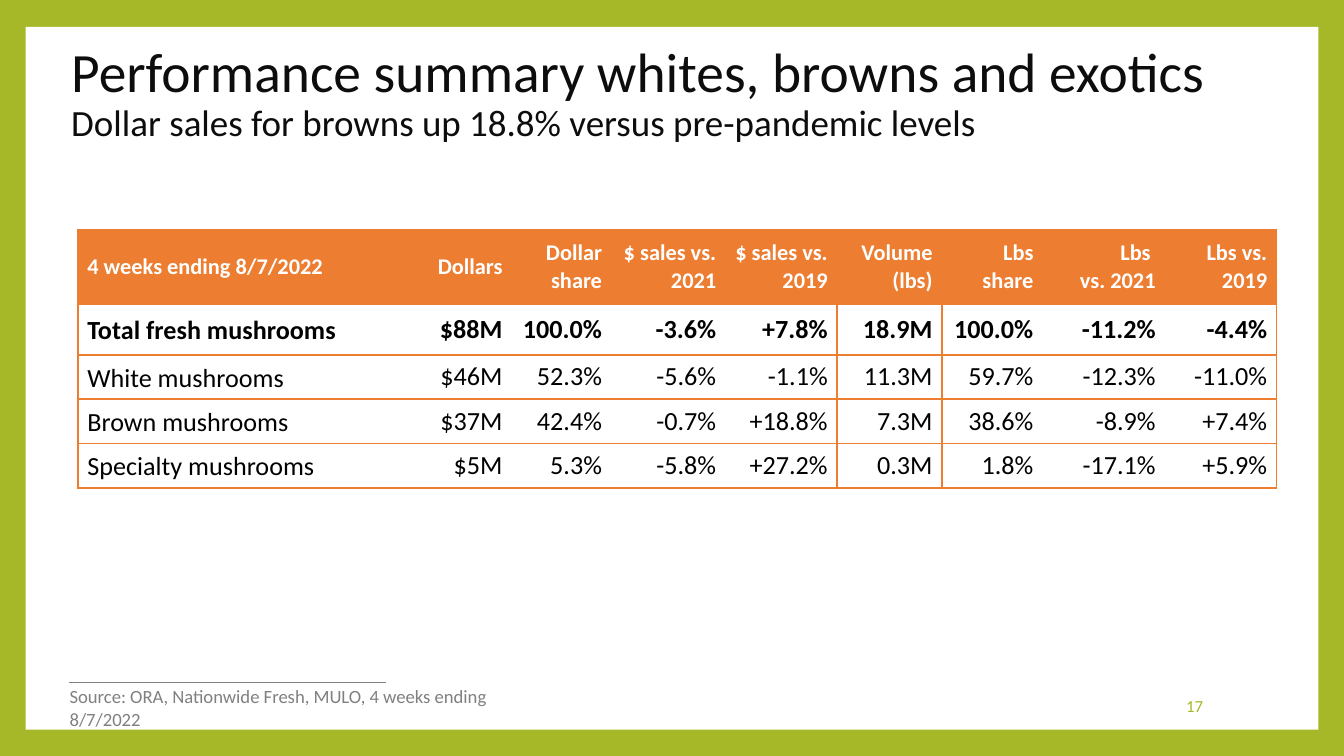
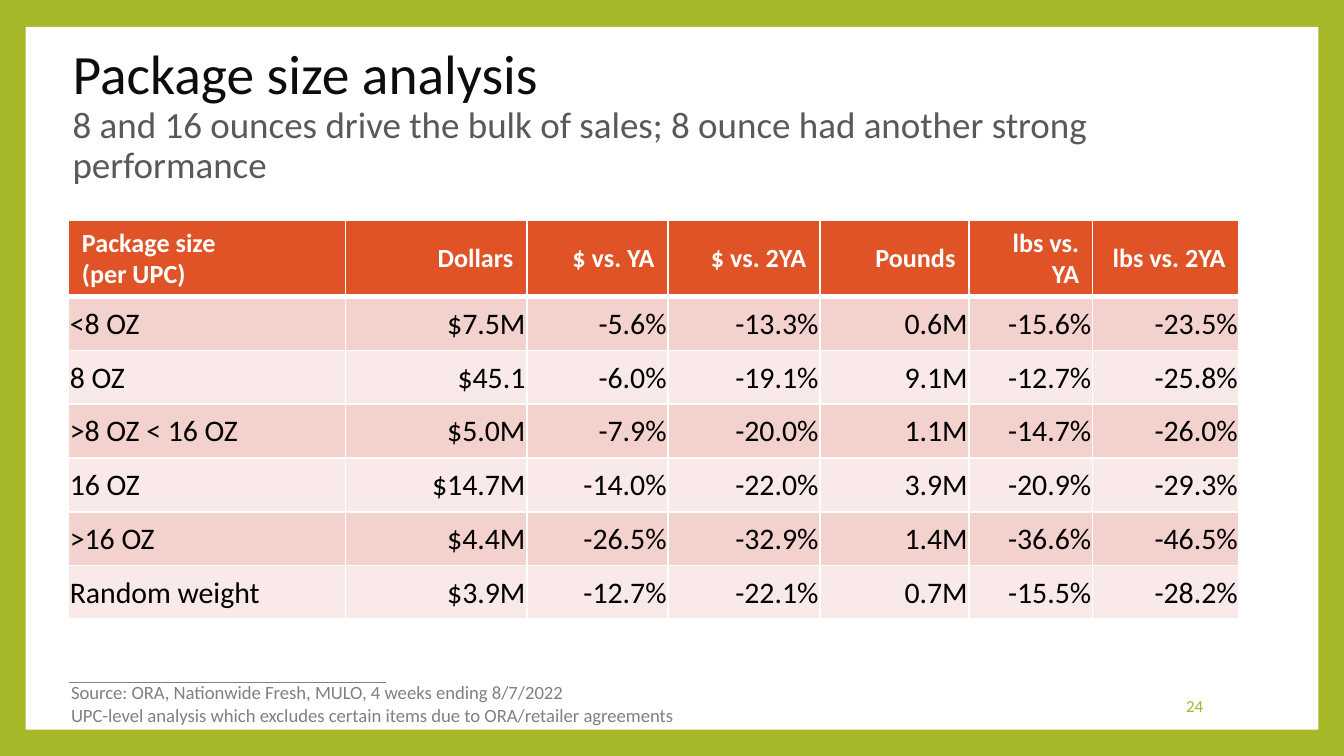
from copy import deepcopy

from lxml import etree
from pptx import Presentation
from pptx import util as u
from pptx.dml.color import RGBColor
from pptx.enum import shapes, text
from pptx.oxml.ns import qn

# Slide size and a square grid, 100 columns wide
W = u.Inches(10)
H = W * 9 // 16
UNIT = W // 100

FONT = "Calibri"
LIME = RGBColor(0xA6, 0xB7, 0x27)
WHITE = RGBColor(0xFF, 0xFF, 0xFF)
BLACK = RGBColor(0, 0, 0)
INK = RGBColor(0x0D, 0x0D, 0x0D)
SLATE = RGBColor(0x59, 0x59, 0x59)
GRAY = RGBColor(0x80, 0x80, 0x80)
ORANGE = RGBColor(0xED, 0x7D, 0x31)
RUST = RGBColor(0xDF, 0x53, 0x27)
ROSE = RGBColor(0xF3, 0xD1, 0xCD)
BLUSH = RGBColor(0xF9, 0xE9, 0xE8)

LEFT, RIGHT = text.PP_ALIGN.LEFT, text.PP_ALIGN.RIGHT
MIDDLE = text.MSO_ANCHOR.MIDDLE
PLAIN = "{2D5ABB26-0587-4C30-8999-92F81FD0307C}"  # table style without grid

SOURCE = "Source: ORA, Nationwide Fresh, MULO, 4 weeks ending 8/7/2022"


def grid(*cells):
    """Turn grid units into lengths."""
    return [round(c * UNIT) for c in cells]


def write(frame, words, size, color, bold=False, align=LEFT, lead=None):
    """Append text to a frame: \\n starts a paragraph, \\v breaks a line."""
    for n, line in enumerate(words.split("\n")):
        par = frame.add_paragraph() if n else frame.paragraphs[-1]
        par.alignment = align
        if lead:
            par.line_spacing = lead
        for k, part in enumerate(line.split("\v")):
            if k:
                par.add_line_break()
                par._p[-1].append(deepcopy(par.runs[-1]._r.rPr))
            if part:
                run = par.add_run()
                run.text = part
                font = run.font
                font.name, font.size, font.bold = FONT, u.Pt(size), bold
                font.color.rgb = color


def panel(slide):
    """White panel inside the lime border, with the rule above the source."""
    rect = slide.shapes.add_shape(shapes.MSO_SHAPE.RECTANGLE,
                                  *grid(1.9, 2, 96.2, 52.3))
    rect.shadow.inherit = False
    rect.fill.solid()
    rect.fill.fore_color.rgb = WHITE
    rect.line.fill.background()

    rule = slide.shapes.add_connector(shapes.MSO_CONNECTOR.STRAIGHT,
                                      *grid(5.1, 50.8, 28.7, 50.8))
    rule.line.color.rgb = GRAY
    rule.line.width = u.Pt(0.79)
    etree.SubElement(rule._element.spPr, qn("a:effectLst"))


def heading(slide, box, head, sub, tone):
    title = slide.shapes.title
    title.left, title.top, title.width, title.height = grid(*box)
    tree = title._element.getparent()
    tree.append(title._element)  # bring in front of the panel
    frame = title.text_frame
    frame.auto_size = text.MSO_AUTO_SIZE.NONE
    frame.vertical_anchor = MIDDLE
    write(frame, head + "\v", 29.7, INK, lead=0.9)
    write(frame, sub, 19.8, tone, lead=0.9)


def footer(slide, box, note, page):
    # Page number
    frame = slide.shapes.add_textbox(*grid(76.5, 51, 14, 3)).text_frame
    frame.word_wrap = True
    frame.vertical_anchor = MIDDLE
    write(frame, str(page), 9, LIME, align=RIGHT)

    # Source
    frame = slide.shapes.add_textbox(*grid(*box)).text_frame
    frame.word_wrap = False
    frame.auto_size = text.MSO_AUTO_SIZE.SHAPE_TO_FIT_TEXT
    write(frame, note, 10, GRAY)


def edge(cell, side, color, width=1):
    line = etree.SubElement(cell._tc.get_or_add_tcPr(), qn("a:ln" + side),
                            w=str(u.Pt(width)))
    fill = etree.SubElement(line, qn("a:solidFill"))
    etree.SubElement(fill, qn("a:srgbClr"), val=str(color))


def table(slide, spot, cols, rows, data, style):
    """Place a table; style(cell, row, col) returns its text format."""
    area = grid(*spot, sum(cols), sum(rows))
    tab = slide.shapes.add_table(len(rows), len(cols), *area).table
    tab._tbl.tblPr.find(qn("a:tableStyleId")).text = PLAIN
    tab.horz_banding = False
    for part, sizes in ((tab.columns, cols), (tab.rows, rows)):
        for item, size in zip(part, grid(*sizes)):
            if part is tab.columns:
                item.width = size
            else:
                item.height = size
    for r, line in enumerate(data):
        for c, words in enumerate(line.split("|")):
            cell = tab.cell(r, c)
            cell.vertical_anchor = MIDDLE
            look = style(cell, r, c)
            write(cell.text_frame, words, align=RIGHT if c else LEFT, **look)


def inset(cell, left, top, right, bottom):
    (cell.margin_left, cell.margin_top,
     cell.margin_right, cell.margin_bottom) = grid(left, top, right, bottom)


def paint(cell, color):
    cell.fill.solid()
    cell.fill.fore_color.rgb = color


def outlined(cell, r, c):
    """Orange rules; dollars and volume are split after the fifth column."""
    inset(cell, 0.7, 0, 0.7, 0)
    sides = ("L" if c in (0, 5) else "") + ("R" if c in (4, 8) else "") + "TB"
    for side in sides:
        edge(cell, side, ORANGE)
    if r == 0:
        paint(cell, ORANGE)
        return dict(size=12, color=WHITE, bold=True)
    return dict(size=14, color=BLACK, bold=r == 1,
                lead=None if c else 1.07)


def banded(cell, r, c):
    """White grid over alternating bands."""
    for side in "LRTB":
        heavy = (r, side) in ((0, "B"), (1, "T"))
        edge(cell, side, WHITE, 3 if heavy else 1)
    if r == 0:
        paint(cell, RUST)
        return dict(size=14, color=WHITE, bold=True)
    inset(cell, 0.1, 0.1, 0.1, 0)
    paint(cell, ROSE if r % 2 else BLUSH)
    return dict(size=16, color=BLACK)


TYPES = [
    "4 weeks ending 8/7/2022|Dollars|Dollar share|$ sales vs. 2021|"
    "$ sales vs. 2019|Volume (lbs)|Lbs\nshare|Lbs \vvs. 2021|Lbs vs. 2019",
    "Total fresh mushrooms|$88M|100.0%|-3.6%|+7.8%|18.9M|100.0%|-11.2%|-4.4%",
    "White mushrooms|$46M|52.3%|-5.6%|-1.1%|11.3M|59.7%|-12.3%|-11.0%",
    "Brown mushrooms|$37M|42.4%|-0.7%|+18.8%|7.3M|38.6%|-8.9%|+7.4%",
    "Specialty mushrooms|$5M|5.3%|-5.8%|+27.2%|0.3M|1.8%|-17.1%|+5.9%",
]

PACKS = [
    "Package size \v(per UPC)|Dollars|$ vs. YA|$ vs. 2YA|Pounds|"
    "lbs vs. YA|lbs vs. 2YA",
    "<8 OZ|$7.5M|-5.6%|-13.3%|0.6M|-15.6%|-23.5%",
    "8 OZ|$45.1|-6.0%|-19.1%|9.1M|-12.7%|-25.8%",
    ">8 OZ < 16 OZ|$5.0M|-7.9%|-20.0%|1.1M|-14.7%|-26.0%",
    "16 OZ|$14.7M|-14.0%|-22.0%|3.9M|-20.9%|-29.3%",
    ">16 OZ|$4.4M|-26.5%|-32.9%|1.4M|-36.6%|-46.5%",
    "Random weight|$3.9M|-12.7%|-22.1%|0.7M|-15.5%|-28.2%",
]


def main():
    prs = Presentation()
    prs.slide_width, prs.slide_height = W, H
    back = prs.slide_master.background.fill
    back.solid()
    back.fore_color.rgb = LIME
    layout = prs.slide_layouts.get_by_name("Title Only")

    # Performance summary
    slide = prs.slides.add_slide(layout)
    panel(slide)
    heading(slide, (4.3, 3.1, 93.7, 7.9),
            "Performance summary whites, browns and exotics",
            "Dollar sales for browns up 18.8% versus pre-pandemic levels", INK)
    footer(slide, (4.2, 50.5, 38.4, 2.7), SOURCE, 17)
    table(slide, (5.8, 17.1),
          (23.7, 8.6, 7.4, 8.5, 8.3, 7.8, 7.5, 9.1, 8.3),
          (5.5, 3.8, 3.3, 3.3, 3.3), TYPES, outlined)

    # Package size
    slide = prs.slides.add_slide(layout)
    panel(slide)
    heading(slide, (4.4, 3.4, 85.3, 10.6), "Package size analysis",
            "8 and 16 ounces drive the bulk of sales; "
            "8 ounce had another strong performance", SLATE)
    footer(slide, (4.3, 50.2, 47.1, 4.4),
           SOURCE + "\nUPC-level analysis which excludes certain items "
           "due to ORA/retailer agreements", 24)
    table(slide, (5.1, 16.4), (20.6, 13.5, 10.5, 11.3, 11.1, 9.2, 10.9),
          [4.6] + [4] * 6, PACKS, banded)

    prs.save("out.pptx")


if __name__ == "__main__":
    main()
